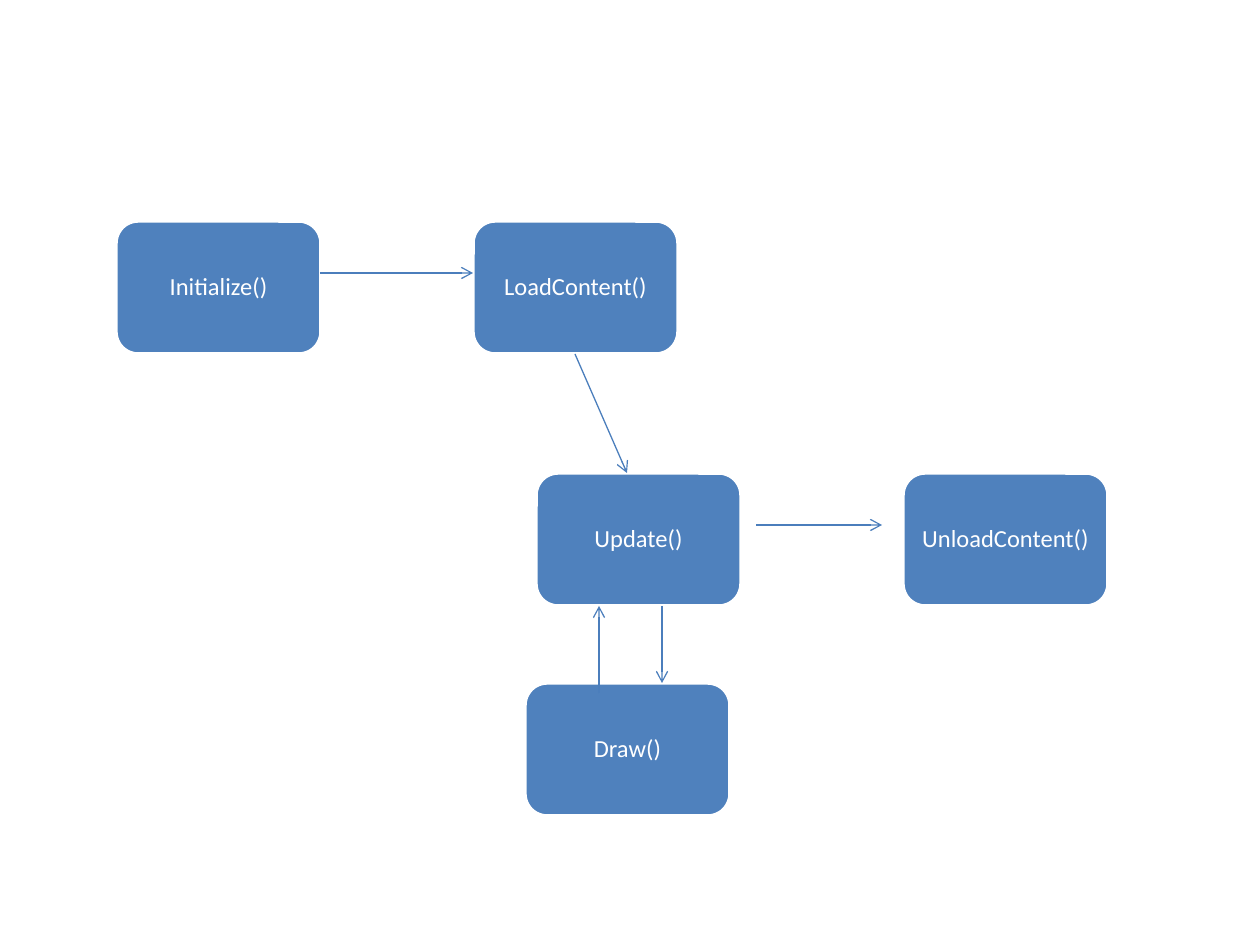
from lxml import etree
from pptx import Presentation, util as u
from pptx.dml.color import RGBColor
from pptx.enum import shapes, text
from pptx.oxml.ns import qn

SCALE = u.Inches(1) / 126
COLORS = {"box": "4F81BD", "edge": "FFFFFF", "text": "FFFFFF", "arrow": "4B7EBC"}
BOX_WIDTH, BOX_HEIGHT = 205, 133
STEPS = [
    ("Initialize()", 116, 221),
    ("LoadContent()", 473, 221),
    ("Update()", 536, 473),
    ("Draw()", 525, 683),
    ("UnloadContent()", 903, 473),
]
ARROWS = [
    (599, 693, 599, 606),
    (756, 525, 882, 525),
    (320, 273, 473, 273),
    (575, 354, 627, 473),
    (662, 606, 662, 683),
]


def px(length):
    return u.Emu(round(length * SCALE))


def color(name):
    return RGBColor.from_string(COLORS[name])


def add_step(page, label, left, top):
    box = page.shapes.add_shape(
        shapes.MSO_SHAPE.ROUNDED_RECTANGLE,
        px(left), px(top), px(BOX_WIDTH), px(BOX_HEIGHT))
    box.shadow.inherit = False
    box.fill.solid()
    box.fill.fore_color.rgb = color("box")
    box.line.color.rgb = color("edge")
    box.line.width = u.Pt(2)
    frame = box.text_frame
    frame.word_wrap = True
    frame.vertical_anchor = text.MSO_ANCHOR.MIDDLE
    frame.margin_left = frame.margin_right = px(7)
    frame.margin_top = frame.margin_bottom = px(7)
    para = frame.paragraphs[0]
    para.text = label
    para.alignment = text.PP_ALIGN.CENTER
    para.line_spacing = 0.9
    para.font.name = "Calibri"
    para.font.size = u.Pt(14)
    para.font.color.rgb = color("text")


def add_arrow(page, *ends):
    arrow = page.shapes.add_connector(
        shapes.MSO_CONNECTOR.STRAIGHT, *map(px, ends))
    arrow.line.color.rgb = color("arrow")
    arrow.line.width = u.Pt(0.75)
    etree.SubElement(arrow.line._get_or_add_ln(), qn("a:tailEnd"), type="arrow")
    etree.SubElement(arrow._element.spPr, qn("a:effectLst"))


def add_flow(page, left, top):
    for label, x, y in STEPS:
        add_step(page, label, left + x, top + y)
    for x1, y1, x2, y2 in ARROWS:
        add_arrow(page, left + x1, top + y1, left + x2, top + y2)


def main():
    deck = Presentation()
    deck.slide_width, deck.slide_height = px(1260), px(945)
    page = deck.slides.add_slide(deck.slide_layouts[6])
    add_flow(page, 0, 0)
    deck.save("out.pptx")


if __name__ == "__main__":
    main()
